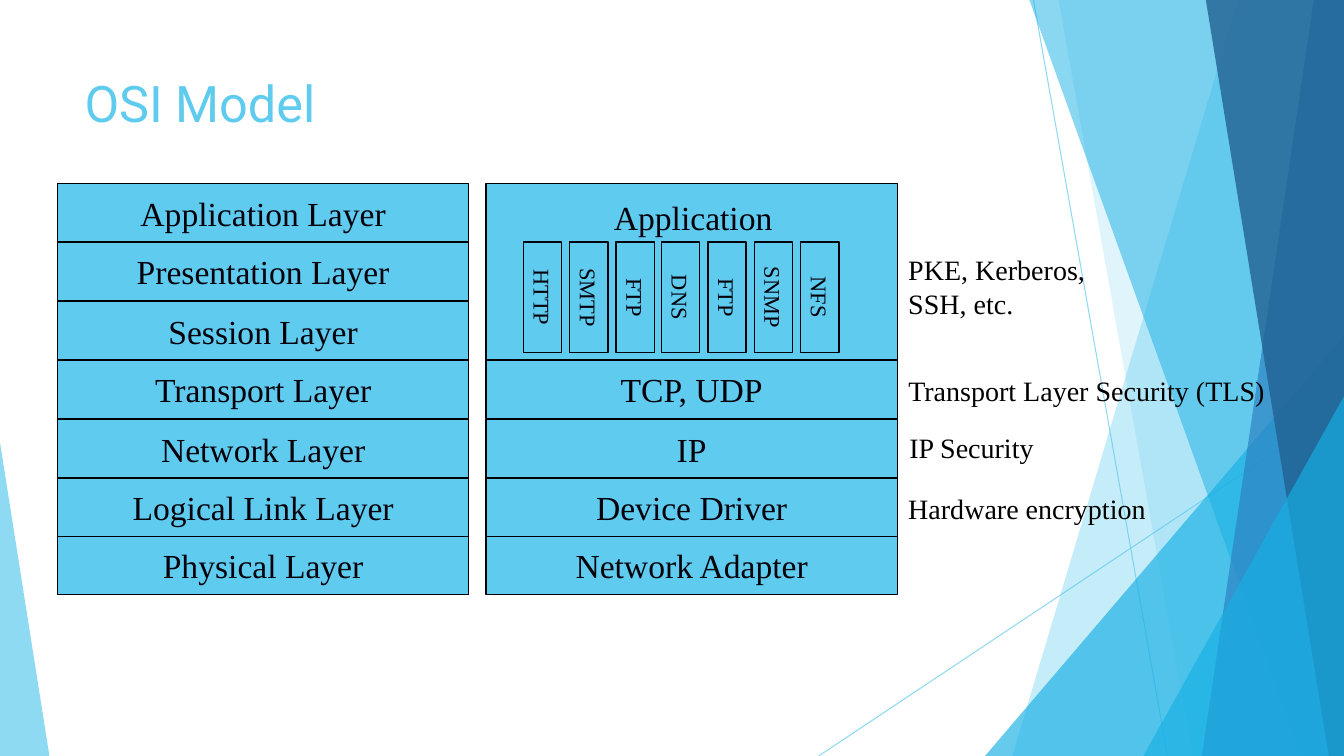
from pptx import Presentation
from pptx.dml.color import RGBColor
from pptx.enum.shapes import MSO_CONNECTOR, MSO_SHAPE
from pptx.enum.text import MSO_ANCHOR, PP_ALIGN
from pptx.oxml.ns import qn
from pptx.oxml.xmlchemy import OxmlElement
from pptx.util import Pt

PX = 9144  # EMU per px, 100 px to the inch
WIDTH, HEIGHT = 1333, 750
ROW_TOP, ROW_PITCH, ROW_HEIGHT = 182, 58.4, 58
COLUMN_WIDTH = 408
SERIF = "Times New Roman"
COLORS = {
    "sky": "5FCBEF",
    "cyan": "17B0E4",
    "blue": "2E83C3",
    "navy": "226292",
    "ink": "04010B",
    "black": "000000",
}

OSI_LAYERS = [
    "Application Layer", "Presentation Layer", "Session Layer", "Transport Layer",
    "Network Layer", "Logical Link Layer", "Physical Layer",
]
INTERNET_LAYERS = ["TCP, UDP", "IP", "Device Driver", "Network Adapter"]
PROTOCOLS = ["HTTP", "SMTP", "FTP", "DNS", "FTP", "SNMP", "NFS"]

# Left, top, width, lines
SECURITY_NOTES = [
    (891, 255, 300, ["PKE, Kerberos,", "SSH, etc."]),
    (891, 358, 375, ["Transport Layer Security (TLS)"]),
    (892, 415, 300, ["IP Security"]),
    (891, 475, 300, ["Hardware encryption"]),
]


def color(name):
    return RGBColor.from_string(COLORS[name])


def emu(*lengths):
    return [length * PX for length in lengths]


def set_opacity(shape, percent):
    for tint in shape.element.spPr.iter(qn("a:srgbClr")):
        alpha = OxmlElement("a:alpha")
        alpha.set("val", str(percent * 1000))
        tint.append(alpha)


def paint(shape, fill, opacity):
    shape.shadow.inherit = False
    shape.fill.solid()
    shape.fill.fore_color.rgb = color(fill)
    shape.line.fill.background()
    set_opacity(shape, opacity)


def add_ray(page, start, end):
    ray = page.shapes.add_connector(MSO_CONNECTOR.STRAIGHT, *emu(*start, *end))
    ray.line.color.rgb = color("sky")
    ray.line.width = Pt(0.75)
    set_opacity(ray, 70)
    ray.element.spPr.append(OxmlElement("a:effectLst"))


def add_band(page, top_left, bottom_left, fill, opacity):
    """Band from a slanted left edge to the right edge of the slide."""
    builder = page.shapes.build_freeform(top_left, 0, PX)
    builder.add_line_segments([(WIDTH, 0), (WIDTH, HEIGHT), (bottom_left, HEIGHT)])
    paint(builder.convert_to_shape(), fill, opacity)


def add_corner(page, left, top, width, apex, fill, opacity):
    """Triangle standing on the bottom edge of the slide."""
    corner = page.shapes.add_shape(
        MSO_SHAPE.ISOSCELES_TRIANGLE, *emu(left, top, width, HEIGHT - top))
    corner.adjustments[0] = apex
    paint(corner, fill, opacity)


def write(shape, lines, size, tint, font=SERIF, align=PP_ALIGN.LEFT,
          anchor=MSO_ANCHOR.MIDDLE):
    frame = shape.text_frame
    frame.word_wrap = True
    frame.vertical_anchor = anchor
    frame.text = "\n".join(lines)
    for para in frame.paragraphs:
        para.alignment = align
        para.font.name = font
        para.font.size = Pt(size)
        para.font.color.rgb = color(tint)


def add_label(page, left, top, width, height, lines, size, tint, **style):
    box = page.shapes.add_textbox(*emu(left, top, width, height))
    write(box, lines, size, tint, **style)
    box.text_frame.margin_right = 0


def add_box(page, left, top, width, height, text="", size=24, fill="sky", line="black"):
    box = page.shapes.add_shape(MSO_SHAPE.RECTANGLE, *emu(left, top, width, height))
    box.shadow.inherit = False
    if fill:
        box.fill.solid()
        box.fill.fore_color.rgb = color(fill)
    else:
        box.fill.background()
    box.line.color.rgb = color(line)
    box.line.width = Pt(1)
    if text:
        write(box, [text], size, "ink", align=PP_ALIGN.CENTER)
    return box


def add_layers(page, left, names, first_row=0):
    for row, name in enumerate(names, first_row):
        top = ROW_TOP + round(row * ROW_PITCH)
        add_box(page, left, top, COLUMN_WIDTH, ROW_HEIGHT, name)


def add_backdrop(page):
    add_ray(page, (1025, 0), (1158, HEIGHT))
    add_ray(page, (WIDTH, 403), (812, HEIGHT))
    add_band(page, 1228, 1004, "sky", 36)
    add_band(page, 1050, 1183, "sky", 20)
    add_corner(page, 977, 333, 356, 1, "cyan", 66)
    add_band(page, 1021, 1291, "cyan", 50)
    add_band(page, 1303, 1192, "blue", 70)
    add_band(page, 1196, 1318, "navy", 80)
    add_corner(page, 1134, 393, 199, 1, "cyan", 66)
    add_corner(page, 0, 439, 49, 0, "sky", 70)


def main():
    deck = Presentation()
    deck.slide_width, deck.slide_height = emu(WIDTH, HEIGHT)
    page = deck.slides.add_slide(deck.slide_layouts[6])

    add_backdrop(page)
    add_label(page, 74, 67, 940, 144, ["OSI Model"], 36, "sky",
              font="Roboto", anchor=MSO_ANCHOR.TOP)

    # The seven OSI layers beside the internet stack
    add_layers(page, 57, OSI_LAYERS)
    add_box(page, 482, ROW_TOP, COLUMN_WIDTH, 175)
    add_layers(page, 482, INTERNET_LAYERS, first_row=3)

    # Application protocols, turned to read downwards
    add_label(page, 599, 190, 177, 50, ["Application"], 24, "ink", anchor=MSO_ANCHOR.TOP)
    for index, protocol in enumerate(PROTOCOLS):
        left = 483 + round(index * 45.8)
        box = add_box(page, left, 276, 110, 38, protocol, 16, fill=None, line="ink")
        box.rotation = 90

    # Security at each level
    for left, top, width, lines in SECURITY_NOTES:
        add_label(page, left, top, width, ROW_HEIGHT, lines, 20, "black")

    deck.save("out.pptx")


if __name__ == "__main__":
    main()
